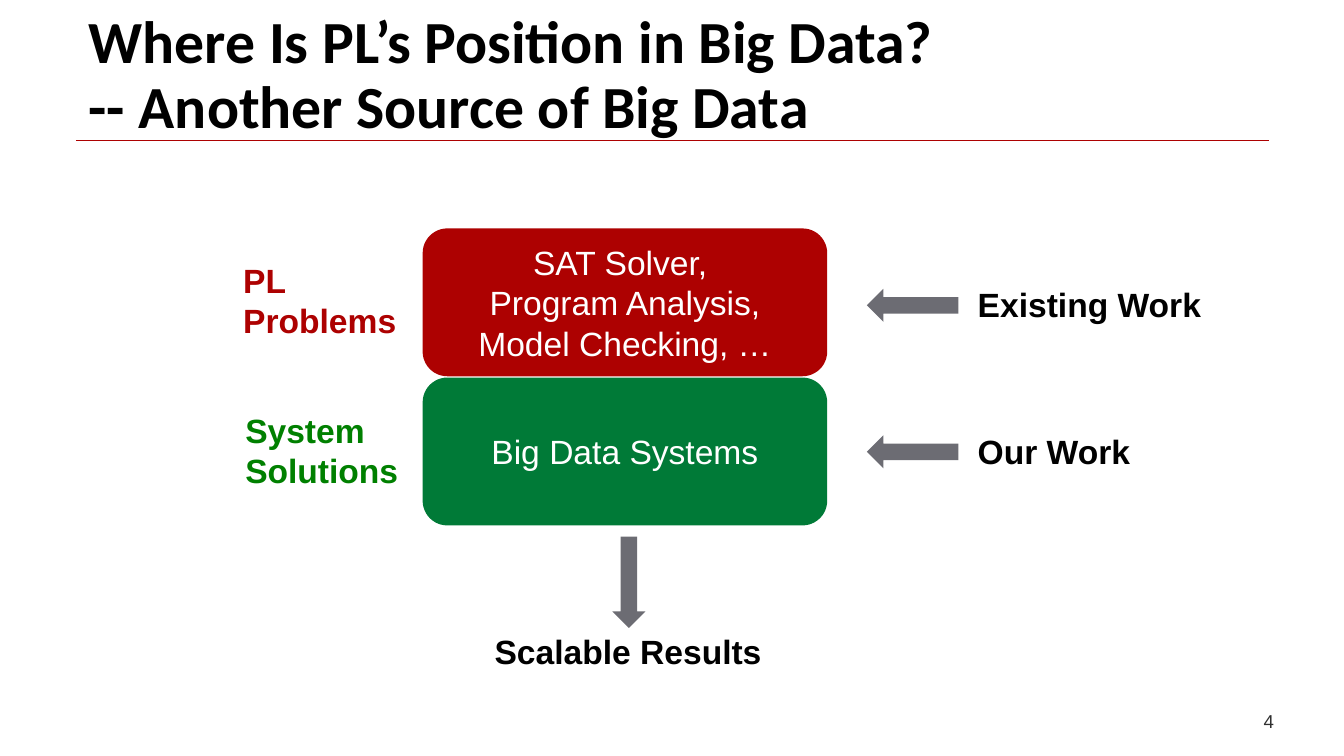
from lxml.etree import SubElement
from pptx import Presentation
from pptx.dml.color import RGBColor
from pptx.enum.shapes import MSO_CONNECTOR, MSO_SHAPE
from pptx.enum.text import MSO_ANCHOR, MSO_AUTO_SIZE, PP_ALIGN
from pptx.oxml.ns import qn
from pptx.util import Emu, Pt

SCALE = 4572
RED = RGBColor(0xAD, 0x01, 0x01)
GREEN = RGBColor(0x00, 0x7A, 0x37)
LEAF = RGBColor(0x00, 0x80, 0x00)
GRAY = RGBColor(0x6C, 0x6C, 0x73)
DARK = RGBColor(0x30, 0x30, 0x30)
BLACK = RGBColor(0x00, 0x00, 0x00)
WHITE = RGBColor(0xFF, 0xFF, 0xFF)


def px(*sizes):
    return [Emu(size * SCALE) for size in sizes]


def apply(item, form):
    for name, value in form.items():
        setattr(item, name, value)


def write(frame, text, color, font, para, body):
    frame.text = text
    apply(frame, body)
    for line in frame.paragraphs:
        apply(line, para)
        for run in line.runs:
            apply(run.font, font)
            run.font.color.rgb = color


def inset():
    side, edge = px(15, 8)
    return {"margin_left": side, "margin_right": side,
            "margin_top": edge, "margin_bottom": edge}


def add_title(slide, text):
    title = slide.shapes.title
    apply(title, dict(zip(("left", "top", "width", "height"), px(112, 40, 1776, 179))))
    write(title.text_frame, text, BLACK,
          {"name": "Calibri", "size": Pt(32), "bold": True},
          {"alignment": PP_ALIGN.LEFT, "line_spacing": Pt(35)},
          {"vertical_anchor": MSO_ANCHOR.BOTTOM, "auto_size": MSO_AUTO_SIZE.NONE})


def add_rule(slide):
    rule = slide.shapes.add_connector(MSO_CONNECTOR.STRAIGHT, *px(113, 209, 1888, 209))
    rule.line.color.rgb = RED
    rule.line.width = Pt(1)
    SubElement(rule._element.spPr, qn("a:effectLst"))


def add_solid(slide, kind, place, color):
    shape = slide.shapes.add_shape(kind, *px(*place))
    shape.shadow.inherit = False
    shape.fill.solid()
    shape.fill.fore_color.rgb = color
    shape.line.fill.background()
    return shape


def add_block(slide, top, color, text):
    block = add_solid(slide, MSO_SHAPE.ROUNDED_RECTANGLE, (629, top, 602, 220), color)
    write(block.text_frame, text, WHITE, {"name": "Arial", "size": Pt(18)},
          {"alignment": PP_ALIGN.CENTER},
          {"vertical_anchor": MSO_ANCHOR.MIDDLE, "word_wrap": True, **inset()})


def add_arrow(slide, left, top, turn=0):
    arrow = add_solid(slide, MSO_SHAPE.LEFT_ARROW, (left, top, 136, 49), GRAY)
    arrow.rotation = turn


def add_label(slide, place, text, color=BLACK):
    label = slide.shapes.add_textbox(*px(*place))
    write(label.text_frame, text, color,
          {"name": "Arial", "size": Pt(18), "bold": True}, {},
          {"word_wrap": False, "auto_size": MSO_AUTO_SIZE.SHAPE_TO_FIT_TEXT, **inset()})


def add_number(slide, text):
    box = slide.shapes.add_textbox(*px(1795, 1040, 186, 60))
    write(box.text_frame, text, DARK, {"name": "Arial", "size": Pt(10)},
          {"alignment": PP_ALIGN.CENTER},
          {"vertical_anchor": MSO_ANCHOR.BOTTOM, "word_wrap": True})


def main():
    deck = Presentation()
    deck.slide_width, deck.slide_height = px(2000, 1125)
    slide = deck.slides.add_slide(deck.slide_layouts[5])
    add_rule(slide)
    add_number(slide, "4")
    add_title(slide, "Where Is PL’s Position in Big Data? \v-- Another Source of Big Data")

    add_block(slide, 562, GREEN, "Big Data Systems")
    add_block(slide, 340, RED, "SAT Solver, \nProgram Analysis, Model Checking, …")
    add_label(slide, (350, 602, 272, 136), "System\nSolutions", LEAF)
    add_label(slide, (347, 379, 260, 136), "PL\nProblems", RED)

    for top, width, text in ((633, 260, "Our Work"), (415, 366, "Existing Work")):
        add_label(slide, (1440, top, width, 76), text)
        add_arrow(slide, 1290, top + 15)
    add_label(slide, (721, 931, 432, 76), "Scalable Results")
    add_arrow(slide, 868, 842, 270)
    deck.save("out.pptx")


if __name__ == "__main__":
    main()
